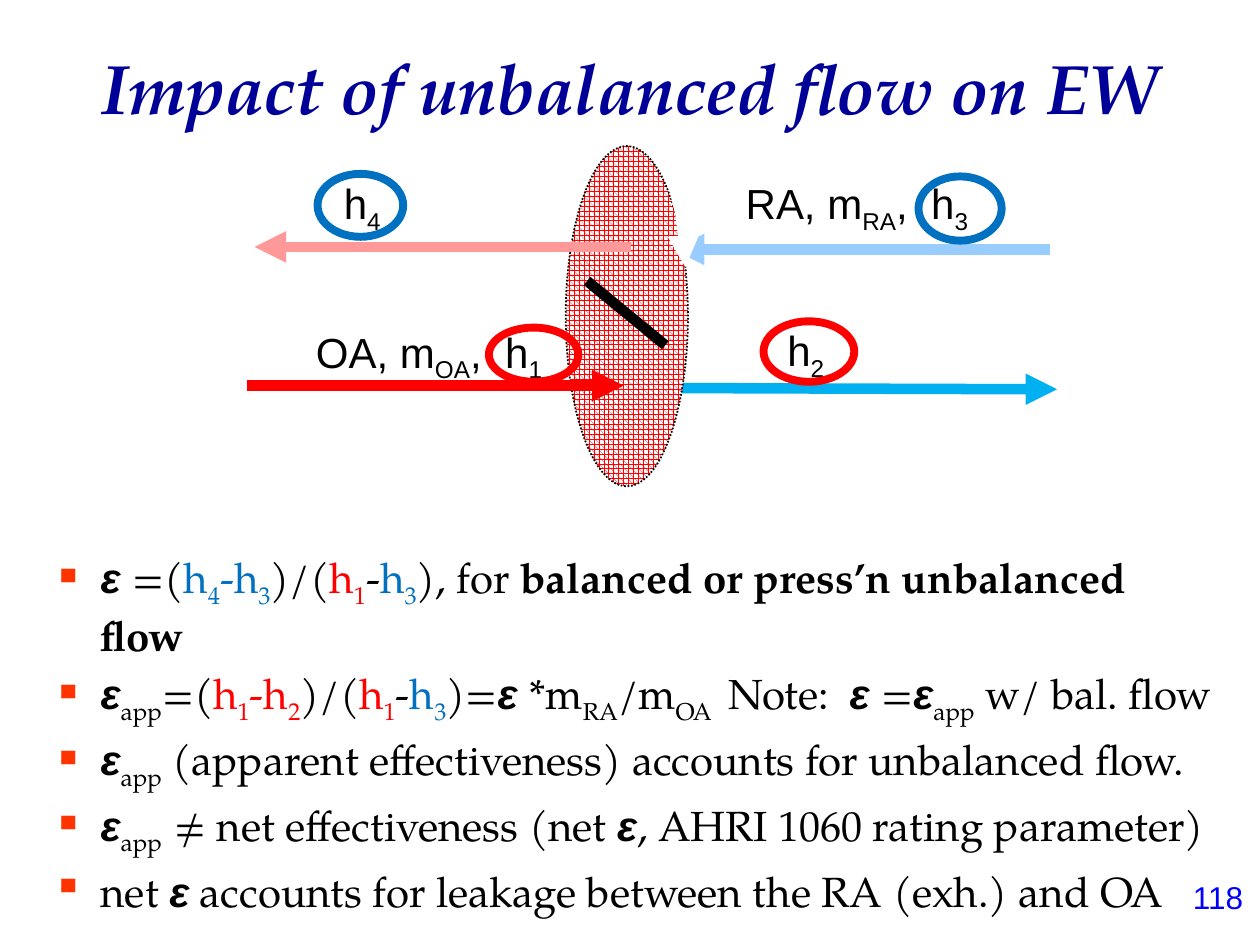
from dataclasses import dataclass
from typing import NamedTuple

from lxml.etree import SubElement
from pptx import Presentation
from pptx.dml.color import RGBColor
from pptx.enum.dml import MSO_LINE_DASH_STYLE as Dash, MSO_PATTERN_TYPE as Pattern
from pptx.enum.shapes import MSO_CONNECTOR_TYPE as Connector, MSO_SHAPE as Shape
from pptx.enum.text import MSO_ANCHOR as Anchor, PP_ALIGN as Align
from pptx.oxml.ns import qn
from pptx.util import Inches, Pt


@dataclass(frozen=True)
class Theme:
    ink: str = "000000"
    title: str = "000099"
    bullet: str = "FF3300"
    number: str = "0000FF"
    exhaust: str = "0070C0"
    outdoor: str = "FF0000"
    supply: str = "00B0F0"
    returned: str = "99CCFF"
    relieved: str = "FF9999"
    paper: str = "FFFFFF"
    serif: str = "TeX Gyre Pagella"
    sans: str = "Arial"
    title_size: int = 40
    body_size: int = 24
    number_size: int = 18
    flow_width: float = 6
    ring_width: float = 4.5


THEME = Theme()


class Span(NamedTuple):
    text: str
    color: str = THEME.ink
    sub: bool = False
    bold: bool = False
    greek: bool = False


class Flow(NamedTuple):
    start: tuple
    end: tuple
    color: str
    arrow: bool = True


class Label(NamedTuple):
    left: float
    top: float
    width: float
    spans: list


class Ring(NamedTuple):
    left: float
    top: float
    width: float
    height: float
    color: str


def sub(text: str, color: str = THEME.ink) -> Span:
    return Span(text, color, sub=True)


def enthalpy(point: str, color: str = THEME.ink, lead: str = "h") -> list:
    return [Span(lead, color), sub(point, color)]


def epsilon(text: str = "ε") -> Span:
    return Span(text, bold=True, greek=True)


def rgb(color: str) -> RGBColor:
    return RGBColor.from_string(color)


def add_spans(paragraph, spans: list, face: str, size: int, **extra) -> None:
    for span in spans:
        run = paragraph.add_run()
        run.text = span.text
        formats = {
            "name": THEME.sans if span.greek else face,
            "size": Pt(size),
            "bold": span.bold,
            "italic": span.greek,
        } | extra
        for name, value in formats.items():
            setattr(run.font, name, value)
        run.font.color.rgb = rgb(span.color)
        if span.sub:
            run.font._element.set("baseline", "-25000")


def add_text_frame(slide, left: float, top: float, width: float, height: float):
    frame = slide.shapes.add_textbox(*map(Inches, (left, top, width, height))).text_frame
    frame.word_wrap = True
    return frame


def add_bullet(paragraph) -> None:
    properties = paragraph._p.get_or_add_pPr()
    properties.set("marL", str(Inches(0.38)))
    properties.set("indent", str(Inches(-0.38)))
    tint = SubElement(properties, qn("a:buClr"))
    SubElement(tint, qn("a:srgbClr")).set("val", THEME.bullet)
    SubElement(properties, qn("a:buChar")).set("char", "▪")


def style_line(shape, color: str, width: float, arrow: bool = False) -> None:
    shape.line.color.rgb = rgb(color)
    shape.line.width = Pt(width)
    if arrow:
        SubElement(shape.line._get_or_add_ln(), qn("a:tailEnd")).set("type", "triangle")


def add_flow(slide, flow: Flow) -> None:
    connector = slide.shapes.add_connector(
        Connector.STRAIGHT, *map(Inches, (*flow.start, *flow.end)))
    style_line(connector, flow.color, THEME.flow_width, flow.arrow)
    SubElement(connector._element.spPr, qn("a:effectLst"))


def add_wheel(slide) -> None:
    wheel = slide.shapes.add_shape(Shape.OVAL, *map(Inches, (4.49, 1.16, 0.97, 2.7)))
    wheel.shadow.inherit = False
    wheel.fill.patterned()
    wheel.fill.pattern = Pattern.SPHERE
    wheel.fill.fore_color.rgb = rgb(THEME.outdoor)
    wheel.fill.back_color.rgb = rgb(THEME.paper)
    style_line(wheel, THEME.ink, 1)
    wheel.line.dash_style = Dash.ROUND_DOT


def add_ring(slide, ring: Ring) -> None:
    oval = slide.shapes.add_shape(Shape.OVAL, *map(Inches, ring[:4]))
    oval.shadow.inherit = False
    oval.fill.background()
    style_line(oval, ring.color, THEME.ring_width)


def add_rotation(slide) -> None:
    path_points = [(5.31, 1.4), (5.35, 1.49), (5.4, 1.69), (5.43, 1.91), (5.44, 2.12)]
    corners = [tuple(map(Inches, point)) for point in path_points]
    builder = slide.shapes.build_freeform(*corners[0])
    builder.add_line_segments(corners[1:], close=False)
    rotation = builder.convert_to_shape()
    rotation.shadow.inherit = False
    rotation.fill.background()
    style_line(rotation, THEME.paper, THEME.flow_width, arrow=True)


COLD, HOT = THEME.exhaust, THEME.outdoor
DRIVING = [Span(")/("), *enthalpy("1", HOT), Span("-"), *enthalpy("3", COLD)]
APPARENT = [epsilon(), sub("app")]

POINTS = [
    [epsilon("ε "), Span("=("), *enthalpy("4", COLD), *enthalpy("3", COLD, "-h"),
     *DRIVING, Span("), for "), Span("balanced or press’n unbalanced flow", bold=True)],
    [*APPARENT, Span("=("), *enthalpy("1", HOT), *enthalpy("2", HOT, "-h"),
     *DRIVING, Span(")="), epsilon("ε "), Span("*m"), sub("RA"), Span("/m"), sub("OA "),
     Span(" Note:  "), epsilon("ε "), Span("="), *APPARENT, Span(" w/ bal. flow")],
    [*APPARENT, Span(" (apparent effectiveness) accounts for unbalanced flow.")],
    [epsilon(), sub("app  "), Span("≠ net effectiveness (net "), epsilon(),
     Span(", AHRI 1060 rating parameter)")],
    [Span("net "), epsilon(), Span(" accounts for leakage between the RA (exh.) and OA")],
]
RETURN_FLOW = Flow((8.33, 1.98), (5.34, 1.98), THEME.returned)
SUPPLY_FLOW = Flow((5.4, 3.08), (8.39, 3.09), THEME.supply)
OUTDOOR_FLOW = Flow((1.96, 3.06), (4.95, 3.06), THEME.outdoor)
DIVIDER = Flow((4.66, 2.23), (5.28, 2.74), THEME.ink, arrow=False)
RELIEF_FLOW = Flow((5.01, 1.96), (2.02, 1.96), THEME.relieved)
LABELS = [
    Label(2.41, 2.54, 2.17, [Span("OA, m"), sub("OA"), *enthalpy("1", lead=",  h")]),
    Label(2.63, 1.36, 1.62, enthalpy("4")),
    Label(6.15, 2.53, 1.62, enthalpy("2")),
    Label(5.82, 1.36, 2.17, [Span("RA, m"), sub("RA"), *enthalpy("3", lead=",  h")]),
]
RINGS = [
    Ring(2.52, 1.38, 0.68, 0.5, COLD),
    Ring(7.29, 1.4, 0.66, 0.51, COLD),
    Ring(3.88, 2.6, 0.71, 0.43, HOT),
    Ring(6.06, 2.55, 0.72, 0.48, HOT),
]


def main() -> None:
    deck = Presentation()
    deck.slide_width, deck.slide_height = Inches(10), Inches(7.5)
    slide = deck.slides.add_slide(deck.slide_layouts[6])

    number = add_text_frame(slide, 9.37, 6.92, 0.63, 0.4)
    add_spans(number.paragraphs[0], [Span("118", THEME.number)], THEME.sans, THEME.number_size)

    title = add_text_frame(slide, 0, 0.3, 10, 0.78)
    title.vertical_anchor = Anchor.MIDDLE
    title.paragraphs[0].alignment = Align.CENTER
    add_spans(title.paragraphs[0], [Span("Impact of unbalanced flow on EW", THEME.title)],
              THEME.serif, THEME.title_size, bold=True, italic=True)

    body = add_text_frame(slide, 0.32, 4.33, 9.44, 2.52)
    for index, spans in enumerate(POINTS):
        paragraph = body.add_paragraph() if index else body.paragraphs[0]
        add_bullet(paragraph)
        paragraph.space_before = Pt(0.2 * THEME.body_size if index else 0)
        add_spans(paragraph, spans, THEME.serif, THEME.body_size)

    for flow in (RETURN_FLOW, SUPPLY_FLOW):
        add_flow(slide, flow)
    add_wheel(slide)
    for flow in (OUTDOOR_FLOW, DIVIDER, RELIEF_FLOW):
        add_flow(slide, flow)
    for label in LABELS:
        frame = add_text_frame(slide, label.left, label.top, label.width, 0.5)
        add_spans(frame.paragraphs[0], label.spans, THEME.sans, THEME.body_size)
    add_rotation(slide)
    for ring in RINGS:
        add_ring(slide, ring)

    deck.save("out.pptx")


if __name__ == "__main__":
    main()
